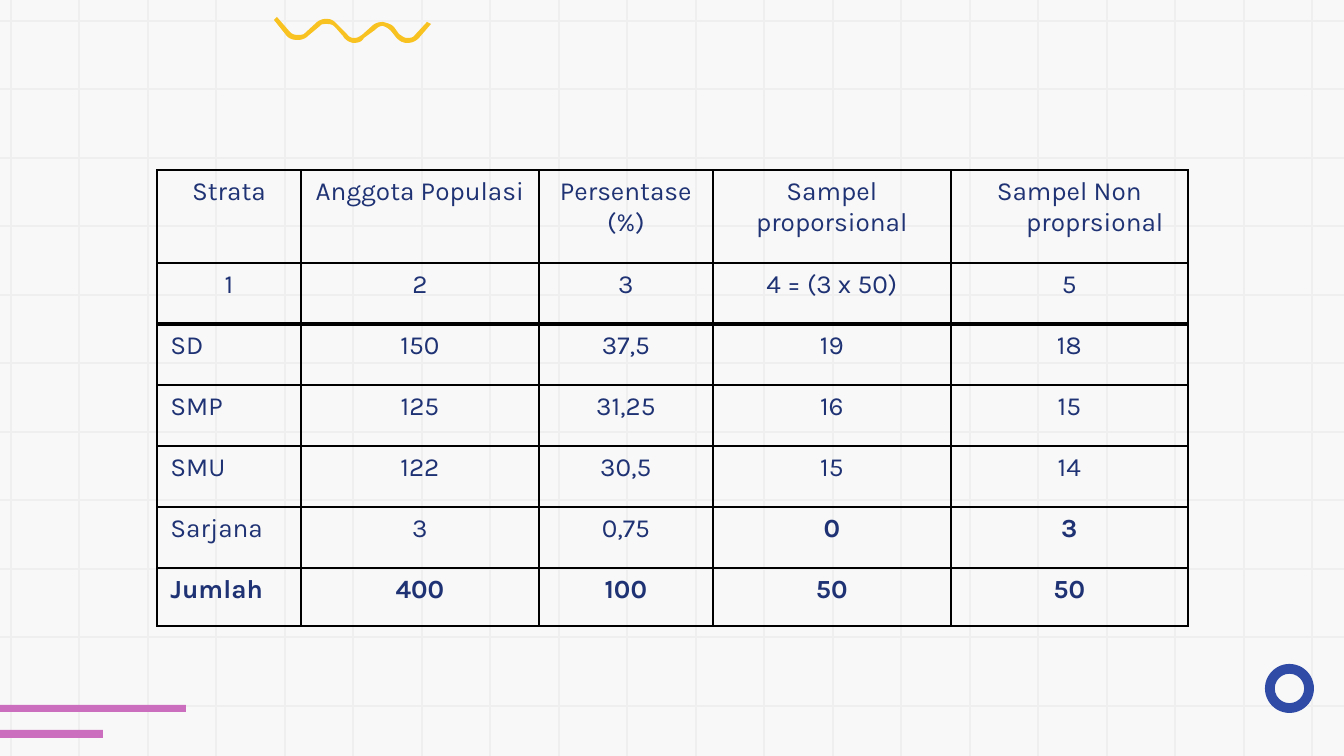
from lxml.etree import SubElement as Sub
from pptx import Presentation
from pptx.dml.color import RGBColor
from pptx.enum.shapes import MSO_CONNECTOR as Link, MSO_SHAPE as Kind
from pptx.enum.text import PP_ALIGN as Align
from pptx.oxml.ns import qn
from pptx.util import Pt

SCALE = 9144000 / 1344
WIDE, HIGH = 1344, 756
PAPER = RGBColor(0xF8, 0xF8, 0xF8)
GRID = RGBColor(0xEF, 0xEF, 0xEF)
PINK = RGBColor(0xCB, 0x6E, 0xBE)
BLUE = RGBColor(0x30, 0x4B, 0xA6)
GOLD = RGBColor(0xF8, 0xC2, 0x20)
NAVY = RGBColor(0x1F, 0x33, 0x74)
BLACK = RGBColor(0, 0, 0)

COLS = [144, 238, 174, 238, 237]
ROWS = [93, 61, 61, 61, 61, 61, 58]
DATA = [
    ["Strata", "Anggota Populasi", "Persentase\n(%)", "Sampel\nproporsional",
     "Sampel Non proprsional"],
    ["1", "2", "3", "4 = (3 x 50)", "5"],
    ["SD", "150", "37,5", "19", "18"],
    ["SMP", "125", "31,25", "16", "15"],
    ["SMU", "122", "30,5", "15", "14"],
    ["Sarjana", "3", "0,75", "0", "3"],
    ["Jumlah", "400", "100", "50", "50"],
]
BOLD = {(5, 3), (5, 4)} | {(6, col) for col in range(5)}
WAVE = [
    [(0, 3)], [(12, 18)],
    [(15, 22), (19, 23), (24, 23)], [(27, 23), (31, 22), (34, 19)],
    [(46, 9)],
    [(47, 7), (50, 7), (53, 7)], [(57, 7), (59, 8), (61, 10)],
    [(69, 19)],
    [(71, 23), (75, 25), (79, 26)], [(84, 26), (88, 25), (90, 21)],
    [(101, 13)],
    [(104, 10), (106, 9), (109, 9)], [(112, 10), (114, 11), (117, 14)],
    [(121, 19)],
    [(124, 23), (128, 26), (133, 26)], [(137, 26), (141, 25), (145, 21)],
    [(157, 7)], [(153, 5)], [(141, 18)],
    [(139, 21), (136, 21), (133, 21)], [(130, 21), (128, 19), (125, 17)],
    [(120, 10)],
    [(117, 7), (113, 6), (109, 5)], [(105, 5), (101, 6), (98, 9)],
    [(88, 18)],
    [(86, 19), (84, 21), (81, 21)], [(79, 21)],
    [(77, 21), (74, 19), (73, 17)],
    [(63, 7)],
    [(61, 5), (58, 2), (54, 2)], [(51, 2)],
    [(49, 2), (45, 3), (42, 6)],
    [(30, 17)],
    [(28, 18), (26, 18), (24, 18)], [(20, 18), (18, 17), (16, 15)],
]


def px(size):
    return round(size * SCALE)


def paint(shape, color):
    shape.shadow.inherit = False
    shape.fill.solid()
    shape.fill.fore_color.rgb = color
    shape.line.fill.background()


def rule(slide, *ends):
    line = slide.shapes.add_connector(Link.STRAIGHT, *map(px, ends))
    line.line.color.rgb = GRID
    line.line.width = Pt(0.75)
    Sub(line._element.spPr, qn("a:effectLst"))


def add_grid(slide, left, top, wide, high):
    for i in range(11):
        y = top + 21 + i * 137 // 2
        rule(slide, left + wide, y, left, y)
    for i in range(20):
        x = left + 11 + i * 137 // 2
        rule(slide, x, top, x, top + high)


def add_bars(slide, left, top, wide, high):
    for y, size, thick in [(0, wide, 7), (high - 8, wide - 83, 8)]:
        box = map(px, (left, top + y, size, thick))
        paint(slide.shapes.add_shape(Kind.RECTANGLE, *box), PINK)


def add_ring(slide, *box):
    ring = slide.shapes.add_shape(Kind.DONUT, *map(px, box))
    ring.adjustments[0] = 0.2
    paint(ring, BLUE)


def bend(start, turn, pull, end, steps=8):
    for i in range(1, steps + 1):
        t = i / steps
        u = 1 - t
        yield tuple(u**3 * a + 3 * u * u * t * b + 3 * u * t * t * c + t**3 * d
                    for a, b, c, d in zip(start, turn, pull, end))


def add_wave(slide, left, top):
    dots = [(3, 0)]
    for part in WAVE:
        dots += list(bend(dots[-1], *part)) if len(part) == 3 else part
    spots = [(px(left + x), px(top + y)) for x, y in dots]
    path = slide.shapes.build_freeform(*spots[0])
    path.add_line_segments(spots[1:], close=True)
    paint(path.convert_to_shape(), GOLD)


def edge(cell, row):
    props = cell._tc.get_or_add_tcPr()
    for side in "LRTB":
        thick = (row, side) in {(1, "B"), (2, "T")}
        line = Sub(props, qn(f"a:ln{side}"), w=str(Pt(2 if thick else 1)))
        fill = Sub(line, qn("a:solidFill"))
        Sub(fill, qn("a:srgbClr"), val=str(BLACK))


def fill_cell(cell, text, row, col):
    edge(cell, row)
    cell.fill.background()
    cell.text = text
    form = {"name": "Karla", "size": Pt(14), "bold": (row, col) in BOLD}
    for para in cell.text_frame.paragraphs:
        para.alignment = Align.JUSTIFY if col == 0 and row > 1 else Align.CENTER
        props = para._p.get_or_add_pPr()
        props.set("marL", str(px(51)))
        props.set("indent", str(px(-51)))
        for run in para.runs:
            for key, value in form.items():
                setattr(run.font, key, value)
            run.font.color.rgb = NAVY


def add_data(slide, left, top):
    box = map(px, (left, top, sum(COLS), sum(ROWS)))
    table = slide.shapes.add_table(len(ROWS), len(COLS), *box).table
    for key in ("first_row", "horz_banding"):
        setattr(table, key, False)
    for col, wide in zip(table.columns, COLS):
        col.width = px(wide)
    for i, (row, high) in enumerate(zip(table.rows, ROWS)):
        row.height = px(high)
        for j, cell in enumerate(row.cells):
            fill_cell(cell, DATA[i][j], i, j)


def main():
    deck = Presentation()
    deck.slide_width, deck.slide_height = px(WIDE), px(HIGH)
    slide = deck.slides.add_slide(deck.slide_layouts[6])
    slide.background.fill.solid()
    slide.background.fill.fore_color.rgb = PAPER
    add_grid(slide, 0, 0, WIDE, HIGH)
    add_bars(slide, 0, 705, 186, 33)
    add_ring(slide, 1265, 664, 49, 49)
    add_wave(slide, 274, 17)
    add_data(slide, 157, 170)
    deck.save("out.pptx")


if __name__ == "__main__":
    main()
